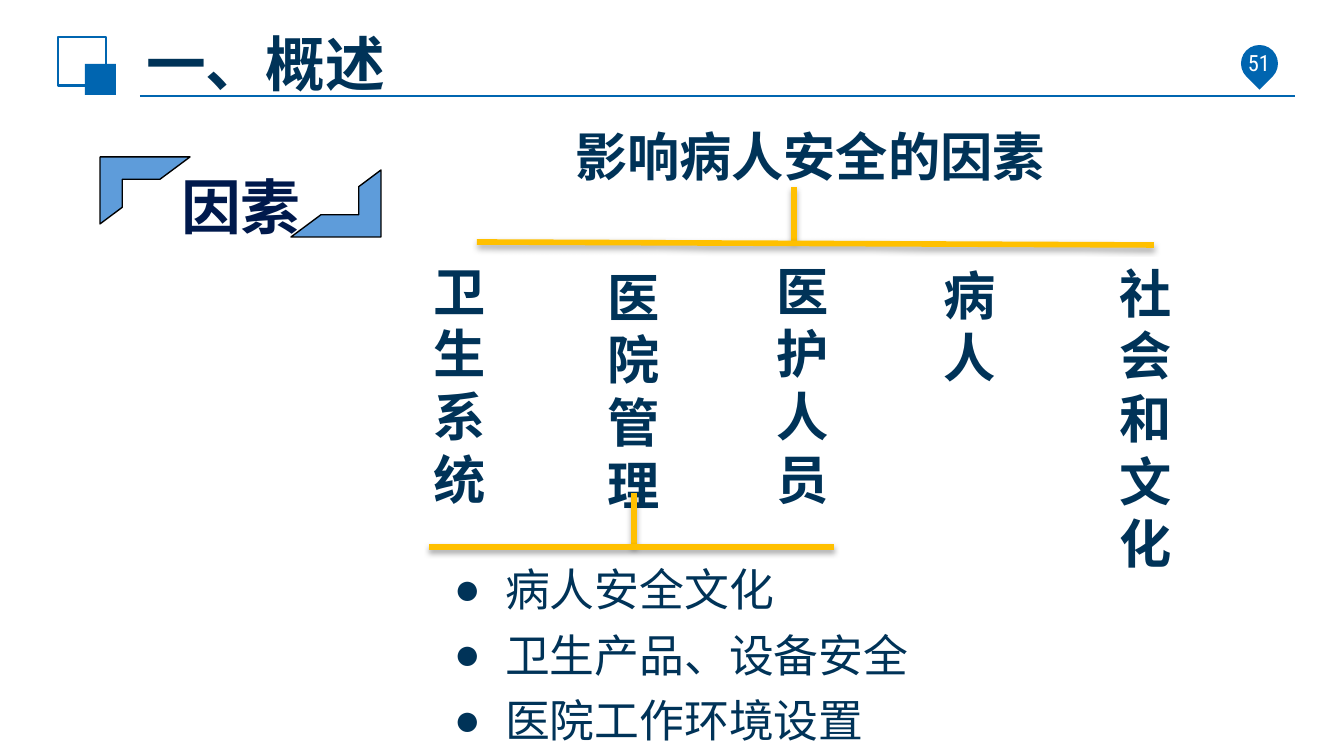
from lxml.etree import SubElement
from pptx import Presentation
from pptx.dml.color import RGBColor
from pptx.enum.shapes import MSO_CONNECTOR, MSO_SHAPE
from pptx.enum.text import MSO_ANCHOR, MSO_AUTO_SIZE, PP_ALIGN
from pptx.oxml.ns import qn
from pptx.util import Emu, Pt

SCALE = 914400 / 134.4
COLORS = {
    "brand": "0065B0",
    "ink": "003358",
    "navy": "00194C",
    "frame": "5E9CDA",
    "branch": "FFC000",
    "black": "000000",
    "white": "FFFFFF",
}
CJK_FONT = "Noto Sans CJK SC"


def px(length):
    """Turn a length in px into EMU."""
    return Emu(round(length * SCALE))


def rgb(name):
    """Look up a named colour."""
    return RGBColor.from_string(COLORS[name])


def write_text(frame, text, size=28, color="ink", font="Arial", bold=False,
               align=PP_ALIGN.LEFT, anchor=MSO_ANCHOR.TOP, top=7, leading=None, bullet=None):
    """Fill a text frame with one paragraph per line of text."""
    frame.word_wrap = True
    frame.auto_size = MSO_AUTO_SIZE.NONE
    frame.vertical_anchor = anchor
    frame.margin_left = frame.margin_right = px(13)
    frame.margin_top, frame.margin_bottom = px(top), px(7)
    frame.text = text
    for paragraph in frame.paragraphs:
        paragraph.alignment = align
        paragraph.space_before = paragraph.space_after = Pt(0)
        paragraph.line_spacing = Pt(leading) if leading else 1.0
        if bullet:
            properties = paragraph._p.get_or_add_pPr()
            properties.set("marL", str(px(51)))
            properties.set("indent", str(-px(51)))
            SubElement(properties, qn("a:buFont"), typeface="Arial")
            SubElement(properties, qn("a:buChar"), char=bullet)
        for run in paragraph.runs:
            run.font.size, run.font.bold, run.font.name = Pt(size), bold, font
            run.font.color.rgb = rgb(color)
            SubElement(run._r.get_or_add_rPr(), qn("a:ea"), typeface=CJK_FONT)


class SlideBuilder:
    """Hold the current slide and draw its elements in one style."""

    def __init__(self, slide):
        """Keep the slide to draw on."""
        self.slide = slide

    def placeholder(self, index, box, text, **style):
        """Move and fill a template placeholder."""
        holder = self.slide.placeholders[index]
        holder.left, holder.top, holder.width, holder.height = map(px, box)
        write_text(holder.text_frame, text, **style)

    def label(self, box, text, **style):
        """Add a text box."""
        write_text(self.slide.shapes.add_textbox(*map(px, box)).text_frame, text, **style)

    def heading(self, box, text, size=28, **style):
        """Add a bold label with tight lines."""
        self.label(box, text, size=size, bold=True, top=14, leading=size * 1.2, **style)

    def shape(self, kind, box, fill=None, line=None, weight=0.75, rotation=0):
        """Add a preset shape."""
        shape = self.slide.shapes.add_shape(kind, *map(px, box))
        shape.shadow.inherit = False
        shape.rotation = rotation
        if fill:
            shape.fill.solid()
            shape.fill.fore_color.rgb = rgb(fill)
        else:
            shape.fill.background()
        if line:
            shape.line.color.rgb = rgb(line)
            shape.line.width = Pt(weight)
        else:
            shape.line.fill.background()

    def line(self, start, end, color="branch", weight=3, shadow=True):
        """Add a straight line, with a soft shadow below it if wanted."""
        connector = self.slide.shapes.add_connector(
            MSO_CONNECTOR.STRAIGHT, *map(px, start + end))
        connector.line.color.rgb = rgb(color)
        connector.line.width = Pt(weight)
        effects = SubElement(connector._element.spPr, qn("a:effectLst"))
        if shadow:
            outer = SubElement(effects, qn("a:outerShdw"), blurRad=str(Pt(3.1)),
                               dist=str(Pt(1.8)), dir="5400000", rotWithShape="0")
            tint = SubElement(outer, qn("a:srgbClr"), val=COLORS["black"])
            SubElement(tint, qn("a:alpha"), val="35000")


def main():
    """Build the slide and save it."""
    deck = Presentation()
    deck.slide_width, deck.slide_height = px(1344), px(756)
    page = SlideBuilder(deck.slides.add_slide(deck.slide_layouts[1]))

    page.line((140, 96), (1295, 96), color="brand", weight=1.25, shadow=False)
    page.shape(MSO_SHAPE.RECTANGLE, (58, 37, 48, 49), line="brand", weight=1.5)
    page.shape(MSO_SHAPE.RECTANGLE, (85, 64, 31, 31), fill="brand")
    page.shape(MSO_SHAPE.TEAR, (1241, 45, 37, 37), fill="brand", rotation=135)
    page.placeholder(0, (133, 39, 867, 48), "一、概述", size=32, bold=True,
                     anchor=MSO_ANCHOR.MIDDLE)
    page.label((1169, 41, 180, 44), "51", size=12, color="white", font="Roboto Condensed",
               align=PP_ALIGN.CENTER, anchor=MSO_ANCHOR.MIDDLE)

    for left, top, rotation in ((100, 157, 0), (291, 170, 180)):
        page.shape(MSO_SHAPE.HALF_FRAME, (left, top, 90, 67), fill="frame", line="black",
                   rotation=rotation)
    page.heading((168, 156, 168, 86), "因素", size=32, color="navy", font=CJK_FONT)

    page.heading((562, 110, 508, 77), "影响病人安全的因素")
    page.line((794, 187), (794, 241))
    page.line((1154, 245), (477, 242))
    factors = (
        (421, 245, 97, "卫生系统"),
        (594, 251, 70, "医院管理"),
        (763, 245, 70, "医护人员"),
        (930, 249, 70, "病人"),
        (1106, 247, 70, "社会和文化"),
    )
    for left, top, width, factor in factors:
        page.heading((left, top, width, 14 + 63 * len(factor)), factor)

    page.line((634, 493), (634, 547))
    page.line((834, 547), (429, 547))
    page.placeholder(1, (441, 548, 519, 199), "病人安全文化\n卫生产品、设备安全\n医院工作环境设置",
                     size=24, top=2, leading=35.1, bullet="●")
    deck.save("out.pptx")


if __name__ == "__main__":
    main()
